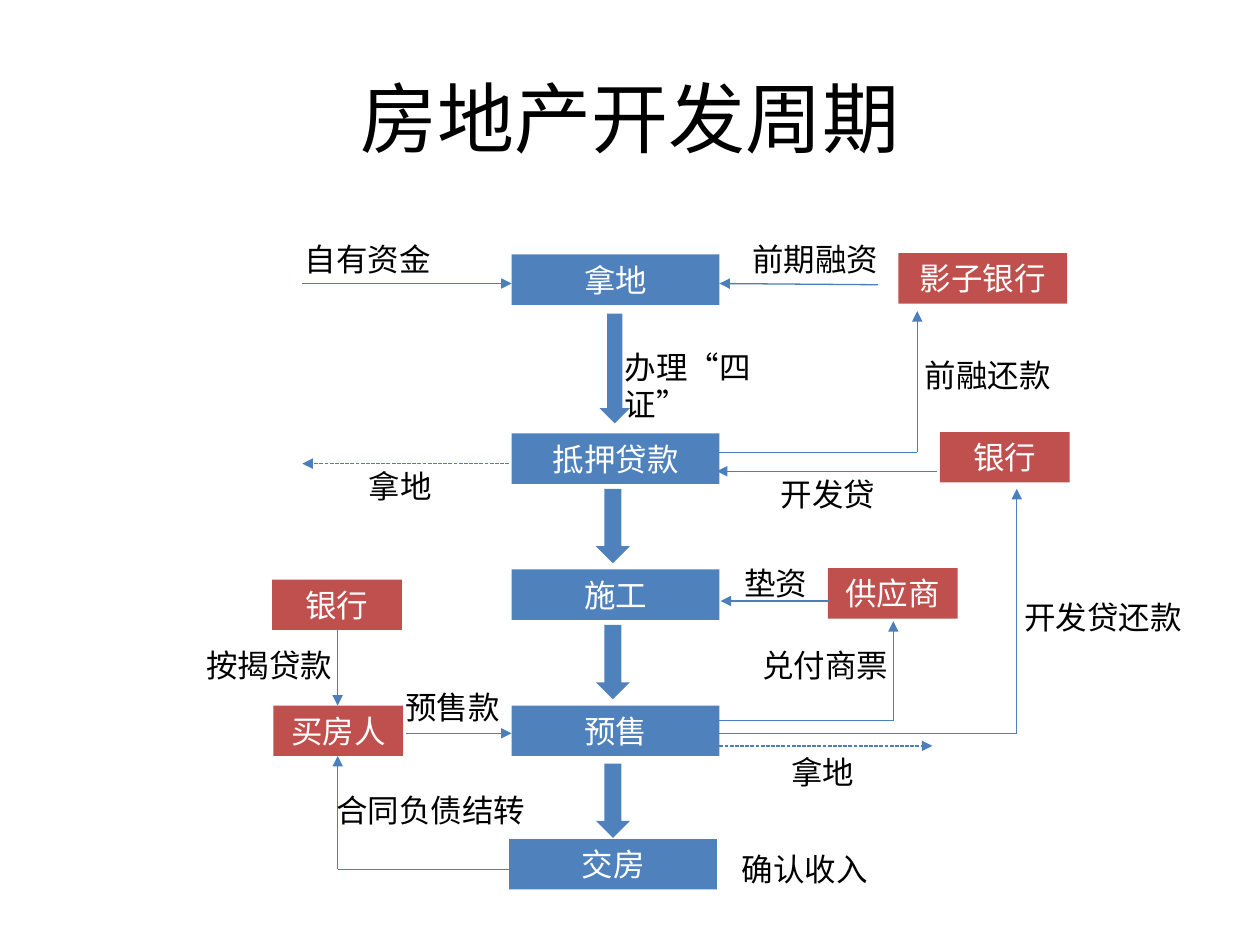
from dataclasses import dataclass
from itertools import pairwise
from lxml.etree import SubElement
from pptx import Presentation
from pptx.dml.color import RGBColor
from pptx.enum.dml import MSO_LINE
from pptx.enum.shapes import MSO_CONNECTOR, MSO_SHAPE
from pptx.enum.text import MSO_ANCHOR, MSO_AUTO_SIZE, PP_ALIGN
from pptx.oxml.ns import qn
from pptx.util import Inches, Pt


@dataclass(frozen=True)
class Theme:
    blue: RGBColor = RGBColor(0x4F, 0x81, 0xBD)
    red: RGBColor = RGBColor(0xC0, 0x50, 0x4D)
    edge: RGBColor = RGBColor(0x4B, 0x7E, 0xBC)
    black: RGBColor = RGBColor(0, 0, 0)
    white: RGBColor = RGBColor(255, 255, 255)
    face: str = "Calibri"
    head: int = 44
    body: int = 18
    rule: float = 0.75


THEME = Theme()
TALL = 0.4

STEPS = [
    ("拿地", 4.06, 2.02),
    ("抵押贷款", 4.06, 3.44),
    ("施工", 4.06, 4.52),
    ("预售", 4.06, 5.6),
    ("交房", 4.04, 6.66),
]
PARTIES = [
    ("影子银行", 7.13, 2.01, 1.34),
    ("银行", 7.46, 3.43, 1.03),
    ("供应商", 6.57, 4.51, 1.03),
    ("银行", 2.16, 4.6, 1.03),
    ("买房人", 2.17, 5.6, 1.03),
]
ARROWS = [
    (4.76, 2.49, 0.24, 0.87),
    (4.73, 3.88, 0.27, 0.59),
    (4.73, 4.96, 0.27, 0.59),
    (4.73, 6.06, 0.27, 0.59),
]
FLOWS = [
    [(2.4, 2.25), (4.06, 2.25)],
    [(6.97, 2.26), (5.71, 2.25)],
    [(5.71, 3.59), (7.28, 3.59), (7.28, 2.47)],
    [(7.44, 3.74), (5.69, 3.74)],
    [(6.59, 4.77), (5.72, 4.77)],
    [(2.68, 5), (2.68, 5.6)],
    [(3.22, 5.82), (4.06, 5.82)],
    [(5.71, 5.72), (7.09, 5.72), (7.09, 4.93)],
    [(5.71, 5.82), (8.07, 5.82), (8.07, 3.88)],
    [(4.06, 6.9), (2.68, 6.9), (2.68, 6)],
]
DASHED = [
    [(4.04, 3.68), (2.4, 3.68)],
    [(5.71, 5.92), (7.4, 5.92)],
]
LABELS = [
    ("自有资金", 2.32, 1.86, 1.34),
    ("前期融资", 5.87, 1.86, 3.31),
    ("办理“四证”", 4.86, 2.71, 1.65),
    ("前融还款", 7.24, 2.78, 1.34),
    ("拿地", 2.83, 3.66, 1.34),
    ("开发贷", 6.1, 3.72, 0.96),
    ("垫资", 5.81, 4.43, 0.73),
    ("开发贷还款", 8.03, 4.7, 1.62),
    ("按揭贷款", 1.54, 5.08, 1.24),
    ("兑付商票", 5.95, 5.08, 1.25),
    ("预售款", 3.12, 5.41, 1.26),
    ("拿地", 6.18, 5.93, 1.34),
    ("合同负债结转", 2.57, 6.23, 1.93),
    ("确认收入", 5.79, 6.7, 1.34),
]


def assign(item, values):
    for name, value in values.items():
        setattr(item, name, value)


def write(shape, text, color, size, align, anchor, fit):
    frame = shape.text_frame
    frame.text = text
    assign(frame, {"word_wrap": True, "auto_size": fit, "vertical_anchor": anchor})
    para = frame.paragraphs[0]
    para.alignment = align
    font = para.runs[0].font
    assign(font, {"name": THEME.face, "size": Pt(size)})
    font.color.rgb = color


def add_block(slide, kind, fill, *frame):
    shape = slide.shapes.add_shape(kind, *map(Inches, frame))
    shape.shadow.inherit = False
    shape.fill.solid()
    shape.fill.fore_color.rgb = fill
    shape.line.fill.background()
    return shape


def add_box(slide, text, left, top, width, fill):
    box = add_block(slide, MSO_SHAPE.RECTANGLE, fill, left, top, width, TALL)
    write(box, text, THEME.white, THEME.body, PP_ALIGN.CENTER,
          MSO_ANCHOR.MIDDLE, MSO_AUTO_SIZE.SHAPE_TO_FIT_TEXT)


def add_label(slide, text, left, top, width):
    box = slide.shapes.add_textbox(*map(Inches, (left, top, width, TALL)))
    write(box, text, THEME.black, THEME.body, PP_ALIGN.LEFT,
          MSO_ANCHOR.TOP, MSO_AUTO_SIZE.SHAPE_TO_FIT_TEXT)


def add_flow(slide, points, dash=None):
    for start, end in pairwise(points):
        link = slide.shapes.add_connector(
            MSO_CONNECTOR.STRAIGHT, *map(Inches, start + end))
        assign(link.line, {"width": Pt(THEME.rule), "dash_style": dash})
        link.line.color.rgb = THEME.edge
        if end == points[-1]:
            SubElement(link.line._get_or_add_ln(), qn("a:tailEnd"), type="triangle")
        SubElement(link._element.spPr, qn("a:effectLst"))


def add_title(slide, text):
    title = slide.shapes.title
    frame = {"left": 0.5, "top": 0.3, "width": 9, "height": 1.25}
    assign(title, {name: Inches(value) for name, value in frame.items()})
    write(title, text, THEME.black, THEME.head, PP_ALIGN.CENTER,
          MSO_ANCHOR.MIDDLE, MSO_AUTO_SIZE.NONE)


def main():
    deck = Presentation()
    assign(deck, {"slide_width": Inches(10), "slide_height": Inches(7.5)})
    slide = deck.slides.add_slide(deck.slide_layouts[5])
    add_title(slide, "房地产开发周期")
    for text, left, top in STEPS:
        add_box(slide, text, left, top, 1.65, THEME.blue)
    for party in PARTIES:
        add_box(slide, *party, THEME.red)
    for arrow in ARROWS:
        add_block(slide, MSO_SHAPE.DOWN_ARROW, THEME.blue, *arrow)
    for points in FLOWS:
        add_flow(slide, points)
    for points in DASHED:
        add_flow(slide, points, MSO_LINE.SQUARE_DOT)
    for label in LABELS:
        add_label(slide, *label)
    deck.save("out.pptx")


if __name__ == "__main__":
    main()
